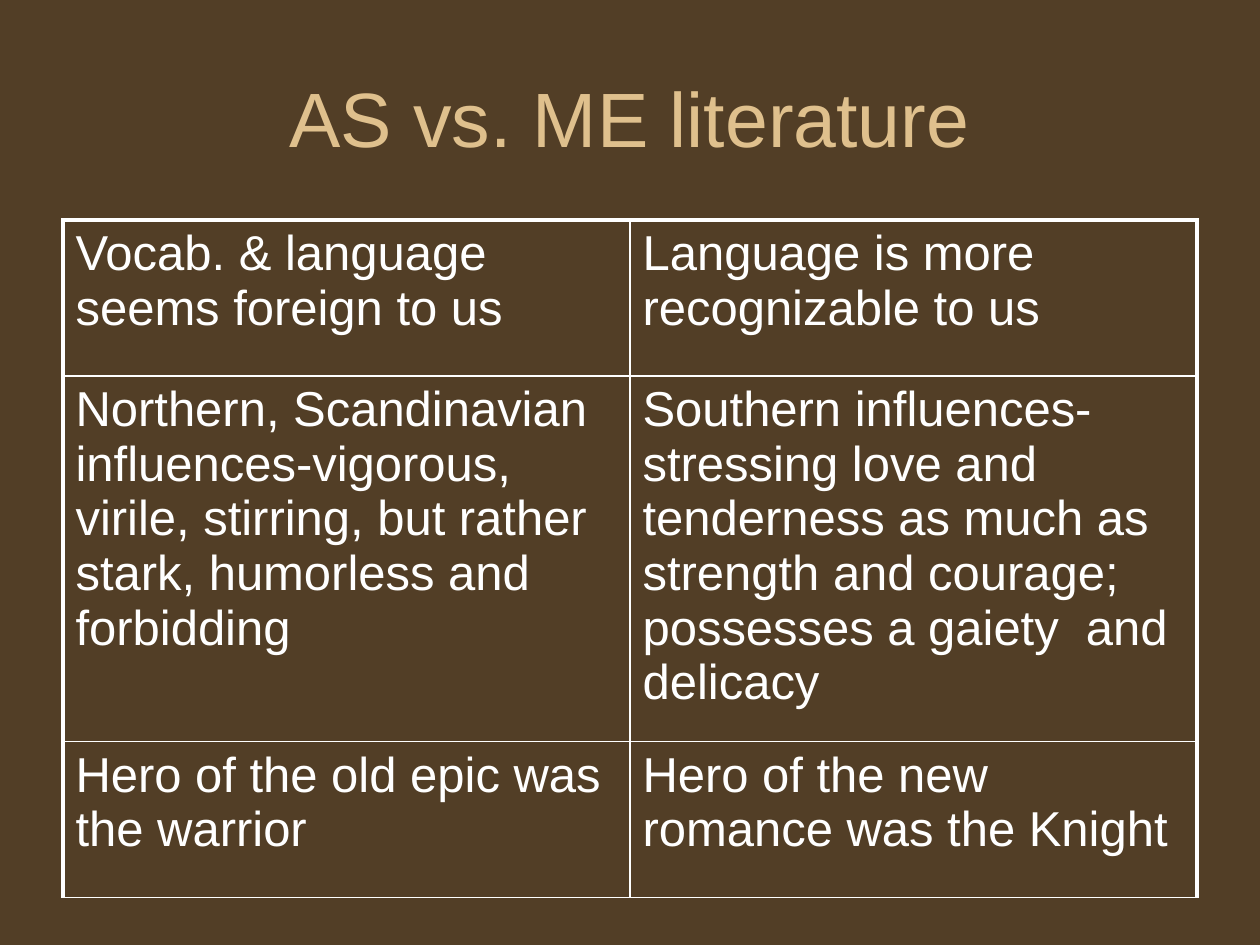
from lxml.etree import SubElement
from pptx import Presentation
from pptx.dml.color import RGBColor
from pptx.enum.text import MSO_ANCHOR, PP_ALIGN
from pptx.oxml.ns import qn
from pptx.util import Pt

PX = 914400 / 126
BROWN = RGBColor(0x52, 0x3E, 0x26)
GOLD = RGBColor(0xDF, 0xC0, 0x8D)
WHITE = RGBColor(0xFF, 0xFF, 0xFF)
THICK, THIN = Pt(2.25), Pt(1)

TITLE = "AS vs. ME literature"
ROW_HEIGHTS = (156, 340, 156)
COMPARISON = (
    ("Vocab. & language seems foreign to us",
     "Language is more recognizable to us"),
    ("Northern, Scandinavian influences-vigorous, virile, stirring, "
     "but rather stark, humorless and forbidding",
     "Southern influences- stressing love and tenderness as much as "
     "strength and courage; possesses a gaiety  and delicacy"),
    ("Hero of the old epic was the warrior",
     "Hero of the new romance was the Knight"),
)


def px(length):
    """Turn a length in px into EMU."""
    return round(length * PX)


def set_attributes(target, **values):
    """Set each named attribute on the target."""
    for name, value in values.items():
        setattr(target, name, value)


def write_text(text_frame, text, size, color, alignment):
    """Write one paragraph of formatted text."""
    paragraph = text_frame.paragraphs[0]
    paragraph.text = text
    paragraph.alignment = alignment
    font = paragraph.runs[0].font
    set_attributes(font, name="Arial", size=Pt(size))
    font.color.rgb = color


def add_border(cell, side, width):
    """Draw one white side of a cell."""
    properties = cell._tc.get_or_add_tcPr()
    line = SubElement(properties, qn(f"a:ln{side}"), w=str(int(width)))
    fill = SubElement(line, qn("a:solidFill"))
    SubElement(fill, qn("a:srgbClr"), val=str(WHITE))


def add_title(slide, left, top, width, height):
    """Place the centred title in its box."""
    shape = slide.shapes.add_textbox(px(left), px(top), px(width), px(height))
    set_attributes(shape.text_frame, word_wrap=True,
                   vertical_anchor=MSO_ANCHOR.MIDDLE)
    write_text(shape.text_frame, TITLE, 44, GOLD, PP_ALIGN.CENTER)


def add_comparison(slide, left, top, width):
    """Place the comparison table with equal columns."""
    row_count, column_count = len(COMPARISON), len(COMPARISON[0])
    table = slide.shapes.add_table(
        row_count, column_count, px(left), px(top), px(width),
        px(sum(ROW_HEIGHTS))).table
    set_attributes(table, first_row=False, horz_banding=False)
    for column in table.columns:
        column.width = px(width / column_count)
    for row_index, texts in enumerate(COMPARISON):
        table.rows[row_index].height = px(ROW_HEIGHTS[row_index])
        for column_index, text in enumerate(texts):
            cell = table.cell(row_index, column_index)
            write_text(cell.text_frame, text, 28, WHITE, PP_ALIGN.LEFT)
            thick_sides = {
                "L": column_index == 0,
                "R": column_index == column_count - 1,
                "T": row_index == 0,
                "B": False,
            }
            for side, is_thick in thick_sides.items():
                add_border(cell, side, THICK if is_thick else THIN)
            cell.fill.background()


def main():
    """Build and save the presentation."""
    presentation = Presentation()
    set_attributes(presentation, slide_width=px(1260), slide_height=px(945))
    slide = presentation.slides.add_slide(presentation.slide_layouts[6])
    slide.background.fill.solid()
    slide.background.fill.fore_color.rgb = BROWN
    add_title(slide, 63, 38, 1134, 158)
    add_comparison(slide, 63, 220, 1134)
    presentation.save("out.pptx")


if __name__ == "__main__":
    main()
